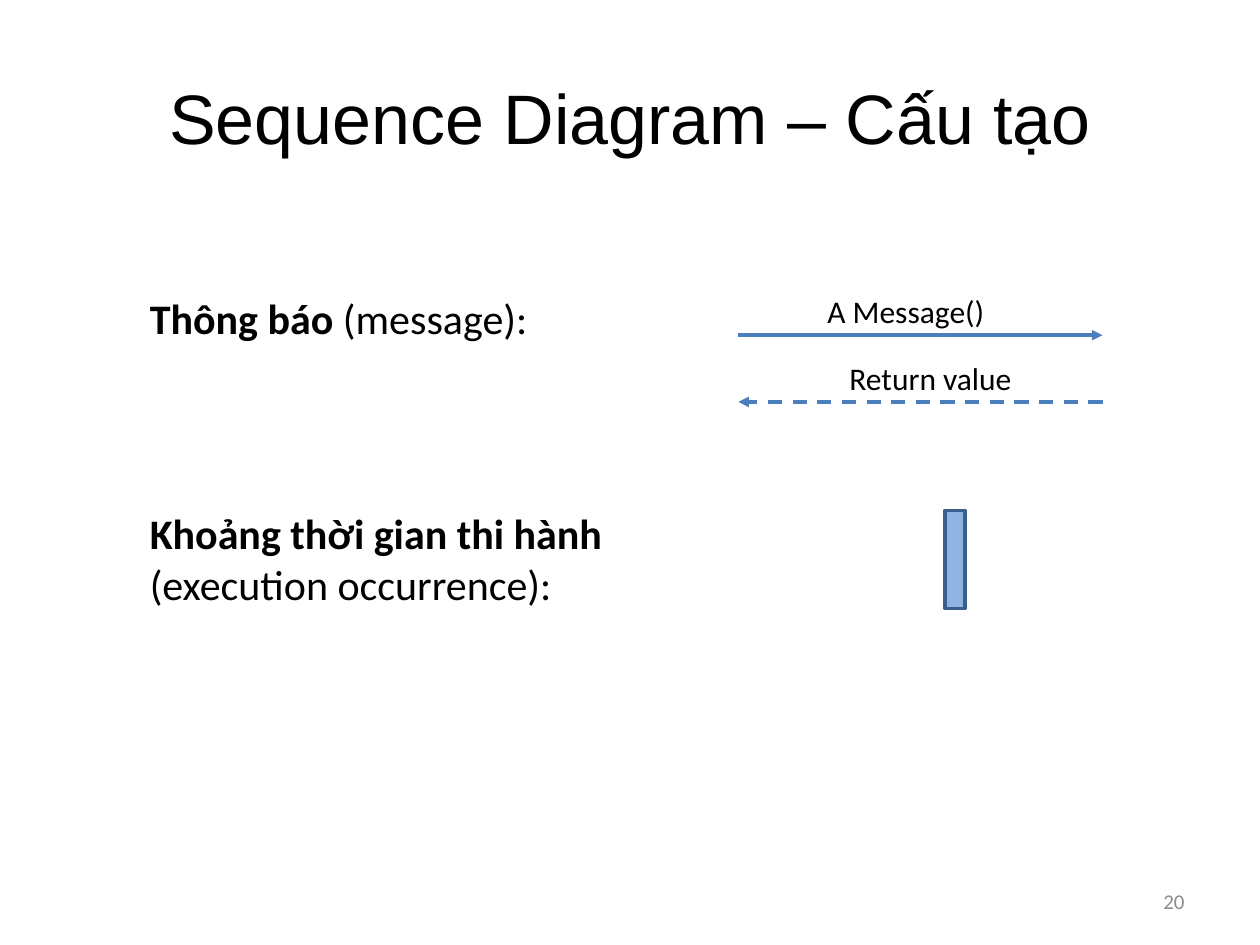
import pptx
import pptx.dml.color
import pptx.enum.dml
import pptx.enum.shapes
import pptx.enum.text
import pptx.util
from lxml import etree
from pptx.oxml.ns import qn

COLORS = {
    "text": "000000",
    "number": "8C8C8C",
    "arrow": "4B7EBC",
    "bar": "8EB4E3",
    "bar_edge": "3A5F8C",
}
ALIGN = pptx.enum.text.PP_ALIGN
ANCHOR = pptx.enum.text.MSO_ANCHOR

deck = pptx.Presentation()
deck.slide_width = pptx.util.Inches(10)
deck.slide_height = pptx.util.Inches(7.5)
slide = deck.slides.add_slide(deck.slide_layouts[6])
COLUMN = deck.slide_width / 100
ROW = deck.slide_height / 75


def rgb(name):
    return pptx.dml.color.RGBColor.from_string(COLORS[name])


def add_text(text, left, top, width, height, size=24, font="Calibri",
             color="text", align=ALIGN.LEFT, anchor=ANCHOR.TOP, lead=""):
    box = slide.shapes.add_textbox(
        int(left * COLUMN), int(top * ROW), int(width * COLUMN), int(height * ROW))
    frame = box.text_frame
    frame.word_wrap = True
    frame.vertical_anchor = anchor
    paragraph = frame.paragraphs[0]
    paragraph.alignment = align
    for words, bold in ((lead, True), (text, False)):
        if words:
            run = paragraph.add_run()
            run.text = words
            run.font.size = pptx.util.Pt(size)
            run.font.name = font
            run.font.bold = bold
            run.font.color.rgb = rgb(color)


add_text("Sequence Diagram – Cấu tạo", 5, 3, 90, 12.5, size=40, font="Arial",
         align=ALIGN.CENTER, anchor=ANCHOR.MIDDLE)
add_text("20", 71.7, 69.5, 23.3, 4, size=12, color="number",
         align=ALIGN.RIGHT, anchor=ANCHOR.MIDDLE)

for lead, term, top, height in (
    ("Thông báo ", "(message):", 22.7, 5),
    ("Khoảng thời gian thi hành ", "(execution occurrence):", 39.8, 9.1),
):
    add_text(term, 10.9, top, 42.2, height, lead=lead)

caller, callee = 58.6, 87.5
for label, width, start, end, line_row, dash in (
    ("A Message()", 15.6, caller, callee, 26.6, None),
    ("Return value", 19.5, callee, caller, 31.9, pptx.enum.dml.MSO_LINE.DASH),
):
    arrow = slide.shapes.add_connector(
        pptx.enum.shapes.MSO_CONNECTOR.STRAIGHT,
        int(start * COLUMN), int(line_row * ROW), int(end * COLUMN), int(line_row * ROW))
    arrow.line.color.rgb = rgb("arrow")
    arrow.line.width = pptx.util.Pt(2)
    if dash:
        arrow.line.dash_style = dash
    etree.SubElement(arrow.line._get_or_add_ln(), qn("a:tailEnd"), type="triangle")
    etree.SubElement(arrow._element.spPr, qn("a:effectLst"))
    add_text(label, 64.1, line_row - 3.9, width, 4, size=18, align=ALIGN.CENTER)

execution = slide.shapes.add_shape(
    pptx.enum.shapes.MSO_SHAPE.RECTANGLE,
    int(75 * COLUMN), int(40.5 * ROW), int(1.6 * COLUMN), int(7.8 * ROW))
execution.shadow.inherit = False
execution.fill.solid()
execution.fill.fore_color.rgb = rgb("bar")
execution.line.color.rgb = rgb("bar_edge")
execution.line.width = pptx.util.Pt(2)

deck.save("out.pptx")
